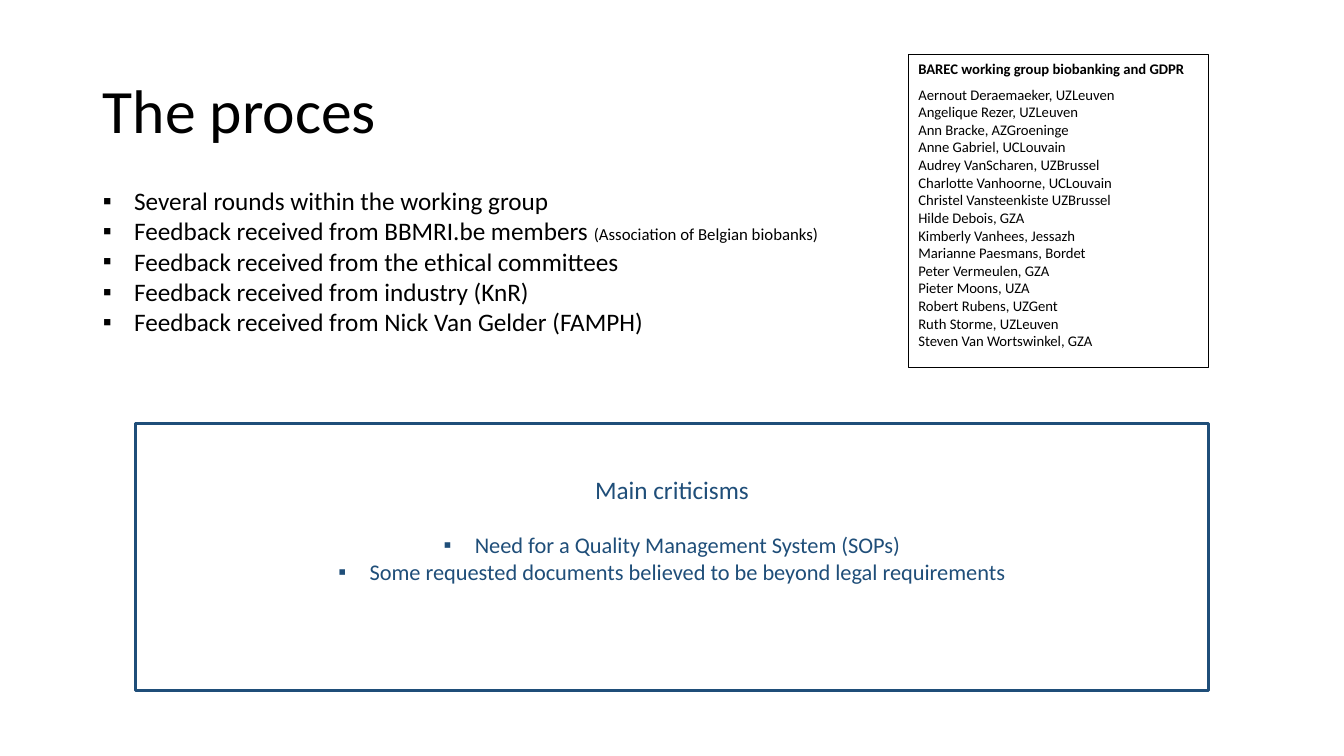
"""Build the slide on the review process and its main criticisms."""
from dataclasses import dataclass
from typing import Any, Optional

from lxml.etree import SubElement
from pptx import Presentation
from pptx.dml.color import RGBColor
from pptx.enum.shapes import MSO_SHAPE
from pptx.enum.text import MSO_ANCHOR, MSO_AUTO_SIZE, PP_ALIGN
from pptx.oxml.ns import qn
from pptx.util import Inches, Pt

COLORS = {"black": "000000", "white": "FFFFFF", "navy": "1F4E79"}
FONT = "Calibri"
HANGING = Inches(0.31)


@dataclass(frozen=True)
class Line:
    text: str
    size: float
    bold: bool = False
    bullet: bool = False
    gap: float = 0
    note: str = ""


@dataclass(frozen=True)
class Block:
    box: tuple[float, float, float, float]
    lines: list[Line]
    color: str = "black"
    align: PP_ALIGN = PP_ALIGN.LEFT
    anchor: MSO_ANCHOR = MSO_ANCHOR.TOP
    spacing: float = 1.0
    bottom: float = 0.05
    wrap: bool = True
    border: float = 0
    fill: Optional[str] = None


TITLE = Block((0.92, 0.4, 11.5, 1.45), [Line("The proces", 44)],
              anchor=MSO_ANCHOR.MIDDLE, spacing=0.9)

ROUNDS = Block((0.92, 1.79, 7.38, 1.62), [
    Line("Several rounds within the working group", 18, bullet=True),
    Line("Feedback received from BBMRI.be members ", 18, bullet=True,
         note="(Association of Belgian biobanks)"),
    Line("Feedback received from the ethical committees", 18, bullet=True),
    Line("Feedback received from industry (KnR)", 18, bullet=True),
    Line("Feedback received from Nick Van Gelder (FAMPH)", 18, bullet=True),
], wrap=False)

CRITICISMS = Block((1.34, 4.2, 10.65, 2.65), [
    Line("Main criticisms", 18, gap=19.5),
    Line("Need for a Quality Management System (SOPs)", 16, bullet=True),
    Line("Some requested documents believed to be beyond legal requirements", 16, bullet=True),
], color="navy", align=PP_ALIGN.CENTER, anchor=MSO_ANCHOR.MIDDLE,
    bottom=0.59, border=2.25, fill="white")

MEMBERS = [
    "Aernout Deraemaeker, UZLeuven",
    "Angelique Rezer, UZLeuven",
    "Ann Bracke, AZGroeninge",
    "Anne Gabriel, UCLouvain",
    "Audrey VanScharen, UZBrussel",
    "Charlotte Vanhoorne, UCLouvain",
    "Christel Vansteenkiste UZBrussel",
    "Hilde Debois, GZA",
    "Kimberly Vanhees, Jessazh",
    "Marianne Paesmans, Bordet",
    "Peter Vermeulen, GZA",
    "Pieter Moons, UZA",
    "Robert Rubens, UZGent",
    "Ruth Storme, UZLeuven",
    "Steven Van Wortswinkel, GZA",
]

WORKING_GROUP = Block((9.01, 0.54, 2.98, 3.11), [
    Line("BAREC working group biobanking and GDPR", 10.5, bold=True, gap=6),
    *(Line(member, 10.5) for member in MEMBERS),
], border=0.75)


def set_attributes(target: Any, values: dict[str, Any]) -> None:
    """Set every named value on the target."""
    for name, value in values.items():
        setattr(target, name, value)


def rgb(name: str) -> RGBColor:
    """Return a named colour."""
    return RGBColor.from_string(COLORS[name])


def add_run(paragraph: Any, text: str, size: float, bold: bool, color: str) -> None:
    """Add one formatted run to the paragraph."""
    run = paragraph.add_run()
    run.text = text
    set_attributes(run.font, {"name": FONT, "size": Pt(size), "bold": bold})
    run.font.color.rgb = rgb(color)


def add_bullet(paragraph: Any) -> None:
    """Give the paragraph a hanging square bullet."""
    properties = paragraph._p.get_or_add_pPr()
    properties.set("marL", str(HANGING))
    properties.set("indent", str(-HANGING))
    SubElement(properties, qn("a:buFont"), typeface="Arial")
    SubElement(properties, qn("a:buChar"), char="▪")


def write_block(shape: Any, block: Block) -> None:
    """Place the shape and fill it with the block's lines."""
    left, top, width, height = (Inches(length) for length in block.box)
    set_attributes(shape, {"left": left, "top": top, "width": width, "height": height})
    frame = shape.text_frame
    set_attributes(frame, {
        "word_wrap": block.wrap,
        "auto_size": MSO_AUTO_SIZE.NONE,
        "vertical_anchor": block.anchor,
        "margin_bottom": Inches(block.bottom),
    })
    for index, line in enumerate(block.lines):
        paragraph = frame.add_paragraph() if index else frame.paragraphs[0]
        set_attributes(paragraph, {
            "alignment": block.align,
            "line_spacing": block.spacing,
            "space_before": Pt(0),
            "space_after": Pt(line.gap),
        })
        if line.bullet:
            add_bullet(paragraph)
        add_run(paragraph, line.text, line.size, line.bold, block.color)
        if line.note:
            add_run(paragraph, line.note, 12, False, block.color)


def add_panel(slide: Any, block: Block) -> None:
    """Draw a bordered rectangle holding the block."""
    shape = slide.shapes.add_shape(
        MSO_SHAPE.RECTANGLE, *(Inches(length) for length in block.box))
    shape.shadow.inherit = False
    if block.fill:
        shape.fill.solid()
        shape.fill.fore_color.rgb = rgb(block.fill)
    else:
        shape.fill.background()
    shape.line.color.rgb = rgb(block.color)
    shape.line.width = Pt(block.border)
    write_block(shape, block)


def main() -> None:
    """Build and save the presentation."""
    presentation = Presentation()
    set_attributes(presentation, {"slide_width": Inches(13.33), "slide_height": Inches(7.5)})
    slide = presentation.slides.add_slide(presentation.slide_layouts[1])
    write_block(slide.shapes.title, TITLE)
    write_block(slide.placeholders[1], ROUNDS)
    for panel in (CRITICISMS, WORKING_GROUP):
        add_panel(slide, panel)
    presentation.save("out.pptx")


if __name__ == "__main__":
    main()
